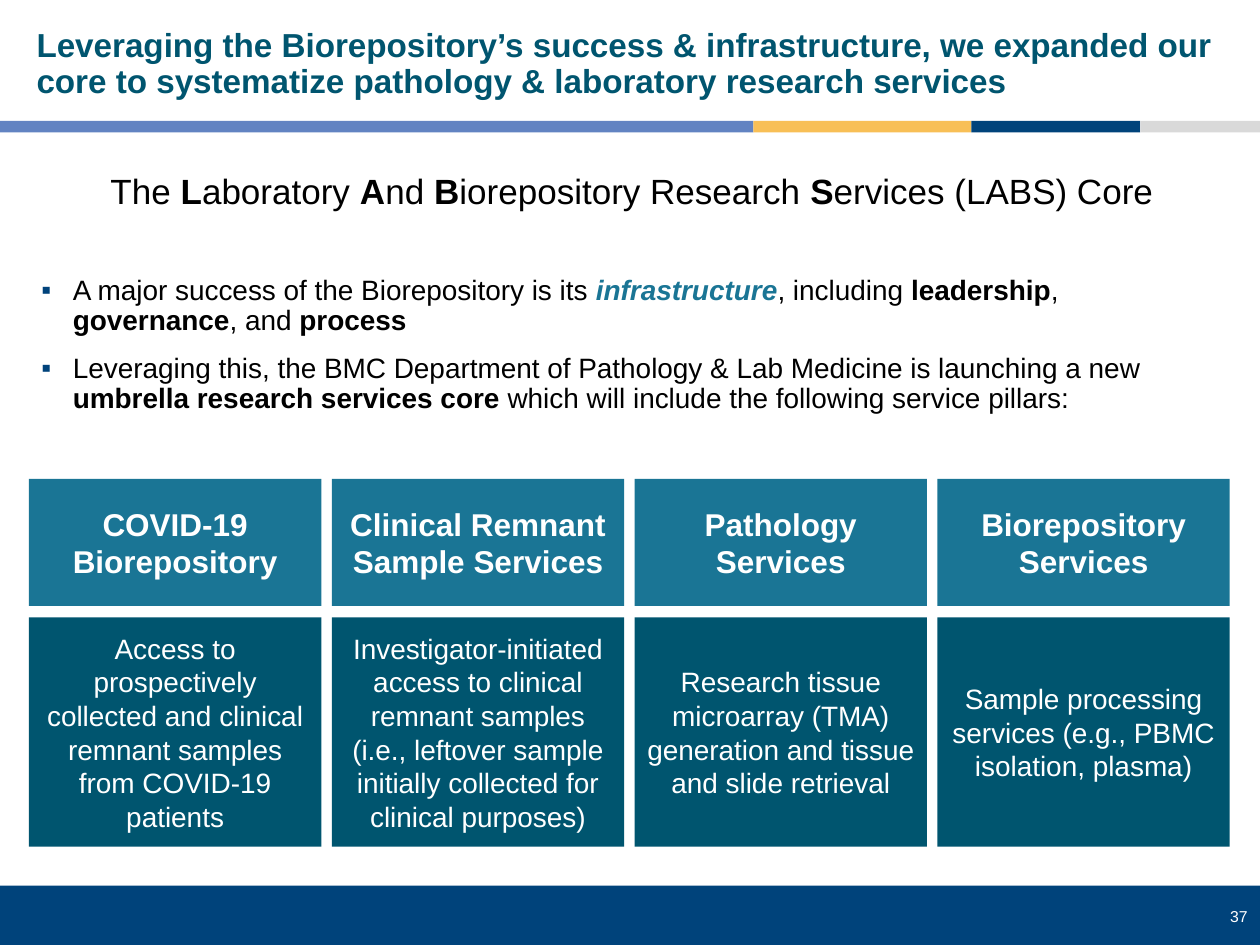
"""Build the slide that introduces the LABS Core and its four service pillars."""
from lxml import etree
from pptx import Presentation
from pptx import util as u
from pptx.dml.color import RGBColor
from pptx.enum import shapes, text
from pptx.oxml.ns import qn

FONT = "Arial"
NAVY, BLUE, GOLD, GREY = "00437B", "6283C2", "F8BF56", "D9D9D9"
TEAL, DARK_TEAL, WHITE, BLACK = "1A7595", "00556F", "FFFFFF", "000000"

TITLE = ("Leveraging the Biorepository’s success & infrastructure, we expanded our "
         "core to systematize pathology & laboratory research services")
STRIPE = [(0, BLUE), (5.98, GOLD), (7.71, NAVY), (9.05, GREY)]
HEADING = [("The ", ""), ("L", "b"), ("aboratory ", ""), ("A", "b"), ("nd ", ""),
           ("B", "b"), ("iorepository Research ", ""), ("S", "b"),
           ("ervices (LABS) Core", "")]
BULLETS = [
    [("A major success of the Biorepository is its ", ""), ("infrastructure", "bi"),
     (", including ", ""), ("leadership", "b"), (", ", ""), ("governance", "b"),
     (", and ", ""), ("process", "b")],
    [("Leveraging this, the BMC Department of Pathology & Lab Medicine is launching a new ", ""),
     ("umbrella research services core ", "b"),
     ("which will include the following service pillars:", "")],
]
PILLARS = [
    ("COVID-19 Biorepository",
     "Access to prospectively collected and clinical remnant samples from COVID-19 patients"),
    ("Clinical Remnant Sample Services",
     "Investigator-initiated access to clinical remnant samples "
     "(i.e., leftover sample initially collected for clinical purposes)"),
    ("Pathology Services",
     "Research tissue microarray (TMA) generation and tissue and slide retrieval"),
    ("Biorepository Services",
     "Sample processing services (e.g., PBMC isolation, plasma)"),
]


def color(value):
    """Turn a hex string into a colour."""
    return RGBColor.from_string(value)


def inches(*lengths):
    """Convert several lengths to inches."""
    return [u.Inches(length) for length in lengths]


def add_span(para, words, size, fill, bold=False, italic=False):
    """Add one formatted run to a paragraph."""
    span = para.add_run()
    span.text = words
    font = span.font
    font.name, font.size = FONT, u.Pt(size)
    font.bold, font.italic = bold, italic
    font.color.rgb = color(fill)


def add_block(page, place, fill):
    """Add a plain filled rectangle."""
    block = page.shapes.add_shape(shapes.MSO_SHAPE.RECTANGLE, *inches(*place))
    block.shadow.inherit = False
    block.fill.solid()
    block.fill.fore_color.rgb = color(fill)
    block.line.fill.background()
    return block


def add_card(page, place, fill, words, size, bold=False):
    """Add a rectangle with centred white text."""
    frame = add_block(page, place, fill).text_frame
    frame.word_wrap = True
    frame.vertical_anchor = text.MSO_ANCHOR.MIDDLE
    para = frame.paragraphs[0]
    para.alignment = text.PP_ALIGN.CENTER
    add_span(para, words, size, WHITE, bold)


def add_text_box(page, place):
    """Add a wrapping text box and return its text frame."""
    frame = page.shapes.add_textbox(*inches(*place)).text_frame
    frame.word_wrap = True
    return frame


def add_bullet(para):
    """Give a paragraph a hanging square bullet."""
    props = para._p.get_or_add_pPr()
    props.set("marL", str(u.Inches(0.25)))
    props.set("indent", str(u.Inches(-0.25)))
    bullet_color = etree.SubElement(props, qn("a:buClr"))
    etree.SubElement(bullet_color, qn("a:srgbClr"), val=NAVY)
    etree.SubElement(props, qn("a:buFont"), typeface=FONT)
    etree.SubElement(props, qn("a:buChar"), char="▪")


def add_spans(para, spans, size):
    """Fill a body paragraph with plain, bold and accented runs."""
    para.line_spacing = 0.9
    for words, style in spans:
        italic = "i" in style
        add_span(para, words, size, TEAL if italic else BLACK, "b" in style, italic)


def set_title(page):
    """Place and format the slide title."""
    title = page.shapes.title
    title.left, title.top, title.width, title.height = inches(0.19, 0.17, 9.57, 0.69)
    frame = title.text_frame
    frame.word_wrap = True
    frame.auto_size = text.MSO_AUTO_SIZE.NONE
    frame.vertical_anchor = text.MSO_ANCHOR.MIDDLE
    para = frame.paragraphs[0]
    para.alignment = text.PP_ALIGN.LEFT
    para.line_spacing = 0.9
    add_span(para, TITLE, 19, DARK_TEAL, bold=True)


def add_stripe(page):
    """Add the coloured stripe under the title."""
    ends = [left for left, _ in STRIPE[1:]] + [10]
    for (left, fill), end in zip(STRIPE, ends):
        add_block(page, (left, 0.96, end - left, 0.09), fill)


def add_body(page):
    """Add the core's name and the bullets below it."""
    frame = add_text_box(page, (0.23, 1.33, 9.57, 1.78))
    heading = frame.paragraphs[0]
    heading.alignment = text.PP_ALIGN.CENTER
    add_spans(heading, HEADING, 20)
    for spans, gap in zip(BULLETS, (37, 10)):
        para = frame.add_paragraph()
        add_bullet(para)
        para.space_before = u.Pt(gap)
        add_spans(para, spans, 16)


def add_pillars(page):
    """Add a header card and a description card for each pillar."""
    first, last, width = 0.23, 7.44, 2.32
    pitch = (last - first) / (len(PILLARS) - 1)
    for index, (name, description) in enumerate(PILLARS):
        left = first + index * pitch
        add_card(page, (left, 3.8, width, 1.01), TEAL, name, 18, bold=True)
        add_card(page, (left, 4.9, width, 1.82), DARK_TEAL, description, 16)


def add_footer(page):
    """Add the footer band and the page number."""
    add_block(page, (0, 7.03, 10, 0.47), NAVY)
    para = add_text_box(page, (9.31, 7.15, 0.69, 0.25)).paragraphs[0]
    para.alignment = text.PP_ALIGN.RIGHT
    add_span(para, "37", 9, WHITE)


def main():
    """Build and save the deck."""
    deck = Presentation()
    deck.slide_width, deck.slide_height = inches(10, 7.5)
    page = deck.slides.add_slide(deck.slide_layouts.get_by_name("Title Only"))
    set_title(page)
    add_stripe(page)
    add_body(page)
    add_pillars(page)
    add_footer(page)
    deck.save("out.pptx")


if __name__ == "__main__":
    main()
